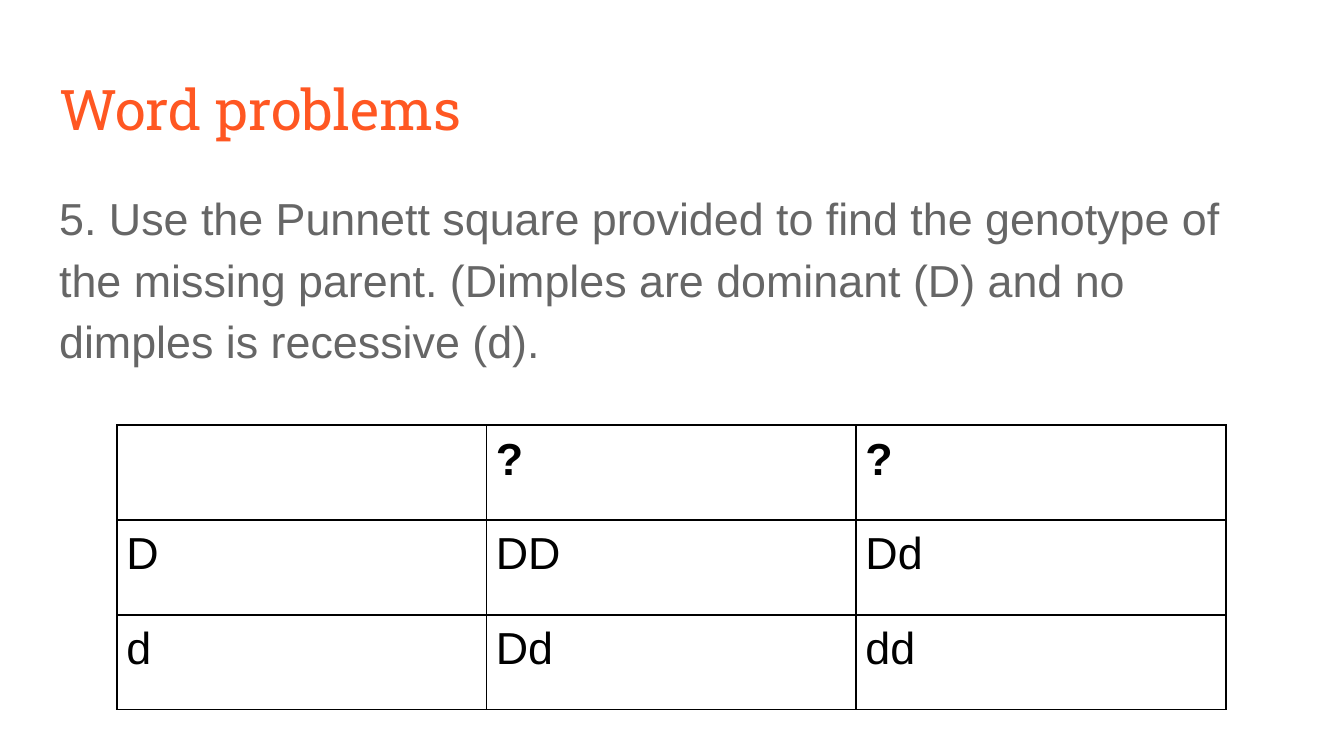
from dataclasses import dataclass

import pptx
import pptx.dml.color
import pptx.enum.text
import pptx.oxml
import pptx.oxml.ns
import pptx.util

Pt = pptx.util.Pt


@dataclass(frozen=True)
class Theme:
    heading_font: str = "Roboto Slab"
    text_font: str = "Arial"
    heading_color: str = "FF5722"
    question_color: str = "666666"
    table_color: str = "000000"
    background: str = "FFFFFF"
    heading_size: float = 30
    text_size: float = 24
    border_width: float = 1


@dataclass(frozen=True)
class Box:
    left: float
    top: float
    width: float
    height: float


THEME = Theme()
TITLE_BOX = Box(24.5, 35, 671, 45.5)
QUESTION_BOX = Box(24.5, 90.5, 671, 269.5)
SQUARE_BOX = Box(62.64, 227.8, 594, 152.4)
PLACEHOLDER_INSET = 7.2
CELL_INSET = 5

QUESTION = (
    "5. Use the Punnett square provided to find the genotype of the missing "
    "parent. (Dimples are dominant (D) and no dimples is recessive (d)."
)
PUNNETT_SQUARE = [
    ["", "?", "?"],
    ["D", "DD", "Dd"],
    ["d", "Dd", "dd"],
]


def write_text(frame, text: str, *, font: str = THEME.text_font,
               size: float = THEME.text_size, color: str = THEME.table_color,
               bold: bool = False, line_spacing: float = 1.0,
               space_after: float = 0) -> None:
    paragraph = frame.paragraphs[0]
    paragraph.alignment = pptx.enum.text.PP_ALIGN.LEFT
    paragraph.line_spacing = line_spacing
    paragraph.space_before = Pt(0)
    paragraph.space_after = Pt(space_after)
    run = paragraph.add_run()
    run.text = text
    run.font.name = font
    run.font.size = Pt(size)
    run.font.bold = bold
    run.font.color.rgb = pptx.dml.color.RGBColor.from_string(color)


def set_insets(target, inset: float) -> None:
    target.margin_left = target.margin_right = Pt(inset)
    target.margin_top = target.margin_bottom = Pt(inset)


def place(placeholder, box: Box, anchor):
    """Move a placeholder and return its prepared text frame."""
    placeholder.left, placeholder.top = Pt(box.left), Pt(box.top)
    placeholder.width, placeholder.height = Pt(box.width), Pt(box.height)
    frame = placeholder.text_frame
    frame.word_wrap = True
    frame.auto_size = pptx.enum.text.MSO_AUTO_SIZE.NONE
    frame.vertical_anchor = anchor
    set_insets(frame, PLACEHOLDER_INSET)
    return frame


def remove_bullet(paragraph) -> None:
    properties = paragraph._p.get_or_add_pPr()
    properties.set("marL", "0")
    properties.set("indent", "0")
    properties.append(pptx.oxml.parse_xml(
        f'<a:buNone {pptx.oxml.ns.nsdecls("a")}/>'))


def add_borders(cell, color: str, width: float) -> None:
    properties = cell._tc.get_or_add_tcPr()
    for position, side in enumerate(("lnL", "lnR", "lnT", "lnB")):
        properties.insert(position, pptx.oxml.parse_xml(
            f'<a:{side} {pptx.oxml.ns.nsdecls("a")} w="{Pt(width)}">'
            f'<a:solidFill><a:srgbClr val="{color}"/></a:solidFill>'
            f'</a:{side}>'))


def add_punnett_square(slide, rows: list[list[str]], box: Box) -> None:
    table = slide.shapes.add_table(
        len(rows), len(rows[0]), Pt(box.left), Pt(box.top),
        Pt(box.width), Pt(box.height)).table
    table.first_row = table.horz_banding = False
    for row_index, alleles in enumerate(rows):
        for column_index, allele in enumerate(alleles):
            cell = table.cell(row_index, column_index)
            cell.fill.background()
            set_insets(cell, CELL_INSET)
            add_borders(cell, THEME.table_color, THEME.border_width)
            if allele:
                write_text(cell.text_frame, allele, bold=row_index == 0)


def main() -> None:
    presentation = pptx.Presentation()
    presentation.slide_width, presentation.slide_height = Pt(720), Pt(405)
    slide = presentation.slides.add_slide(presentation.slide_layouts[1])
    slide.background.fill.solid()
    slide.background.fill.fore_color.rgb = (
        pptx.dml.color.RGBColor.from_string(THEME.background))

    anchors = pptx.enum.text.MSO_ANCHOR
    title = place(slide.shapes.title, TITLE_BOX, anchors.MIDDLE)
    write_text(title, "Word problems", font=THEME.heading_font,
               size=THEME.heading_size, color=THEME.heading_color)

    question = place(slide.placeholders[1], QUESTION_BOX, anchors.TOP)
    write_text(question, QUESTION, color=THEME.question_color,
               line_spacing=1.15, space_after=16)
    remove_bullet(question.paragraphs[0])

    add_punnett_square(slide, PUNNETT_SQUARE, SQUARE_BOX)
    presentation.save("out.pptx")


if __name__ == "__main__":
    main()
